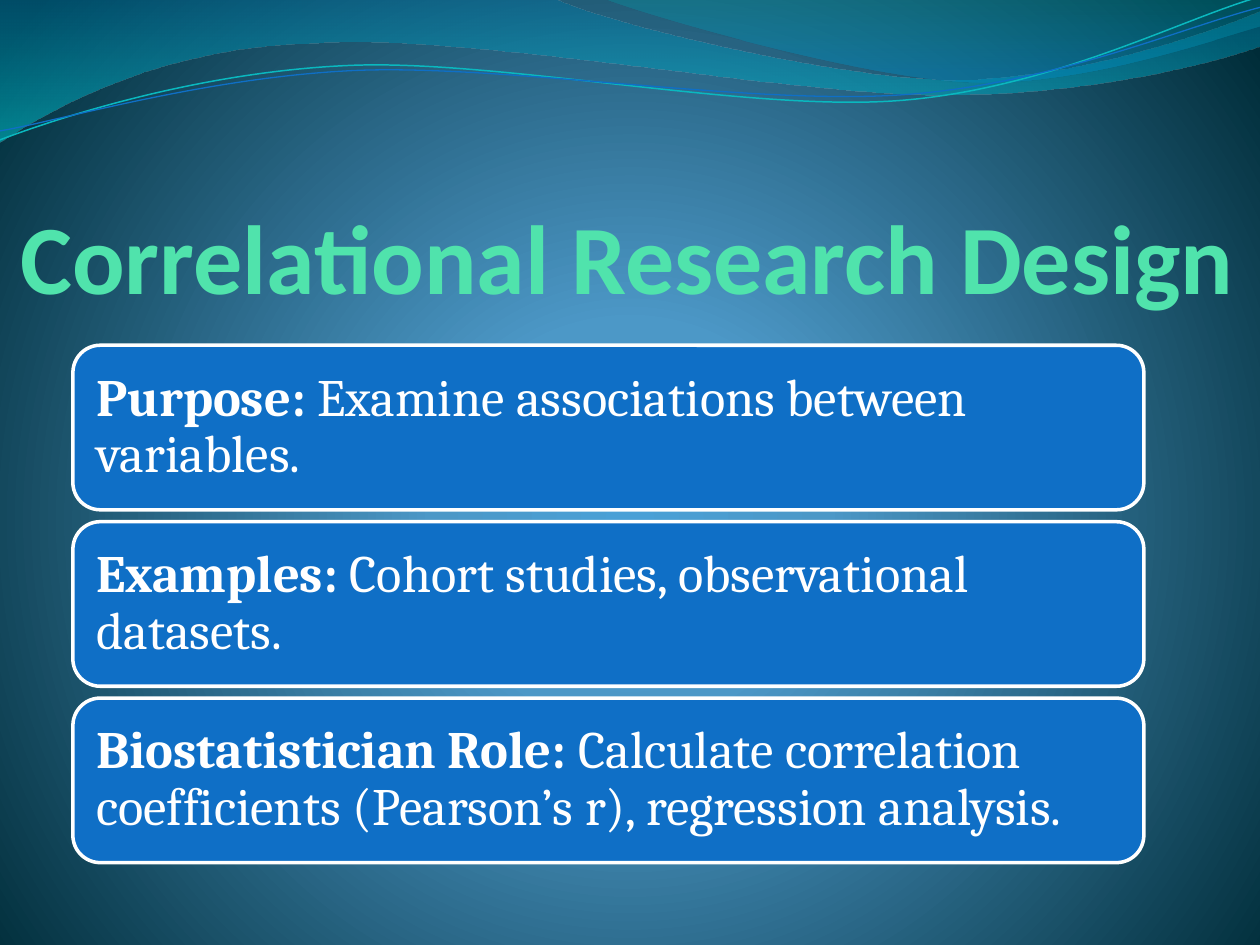
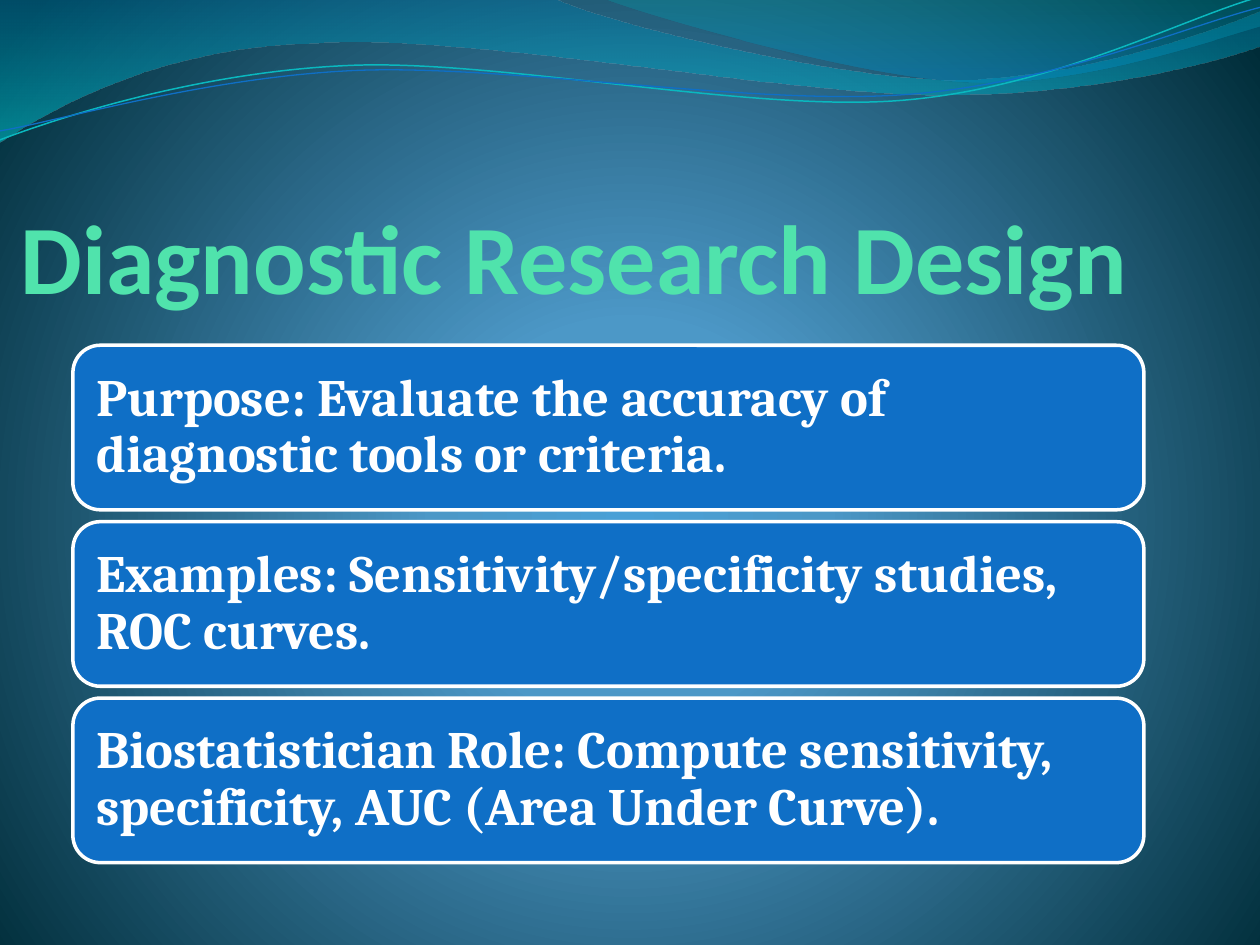
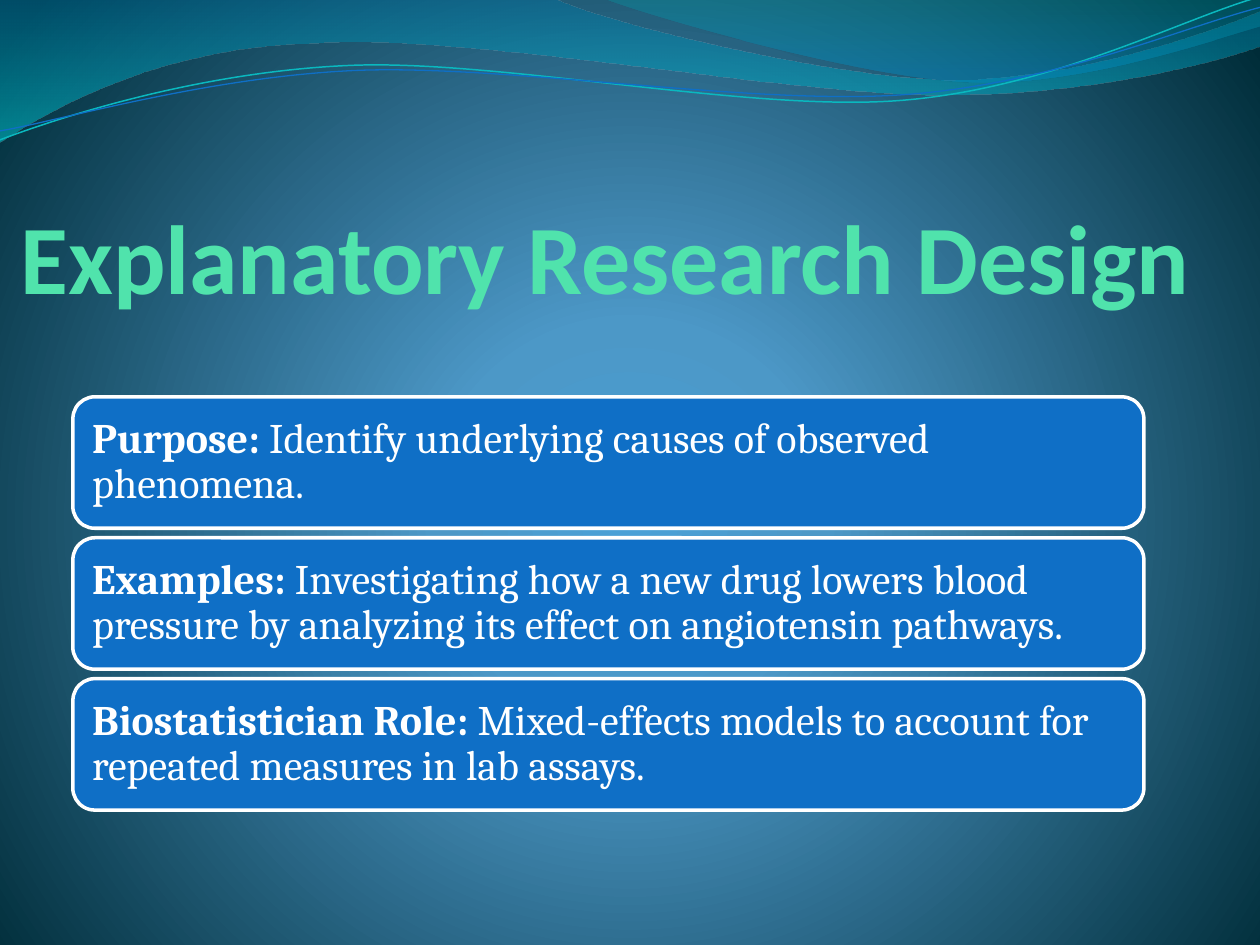
from pptx import Presentation
from pptx.dml.color import RGBColor
from pptx.enum.shapes import MSO_SHAPE
from pptx.enum.text import MSO_ANCHOR, MSO_AUTO_SIZE, PP_ALIGN
from pptx.oxml import parse_xml
from pptx.oxml.ns import nsdecls, qn
from pptx.util import Cm, Pt

ROUND = MSO_SHAPE.ROUNDED_RECTANGLE
LEFT = PP_ALIGN.LEFT
MIDDLE, BOTTOM = MSO_ANCHOR.MIDDLE, MSO_ANCHOR.BOTTOM
FIXED = MSO_AUTO_SIZE.NONE

WHITE = RGBColor(0xFF, 0xFF, 0xFF)
BLUE = RGBColor(0x0F, 0x6F, 0xC6)
AQUA = RGBColor(0x0A, 0xB8, 0xBF)
MINT = RGBColor(0x50, 0xE3, 0xAC)
SKY = RGBColor(0x4A, 0xA0, 0xD6)
STEEL = RGBColor(0x4C, 0x98, 0xC7)
NIGHT = RGBColor(0x00, 0x2C, 0x38)
DEEP = RGBColor(0x00, 0x74, 0xA1)
CYAN = RGBColor(0x00, 0xC6, 0xCF)
TEAL = RGBColor(0x00, 0xA1, 0xA9)
AZURE = RGBColor(0x00, 0x8B, 0xBF)

# Gradient stops: position, colour, opacity (all in percent)
GLOW = [(0, SKY, 100), (25, STEEL, 100), (100, NIGHT, 100)]
RADIAL = ('<a:path path="circle"><a:fillToRect l="10000" t="110000" '
          'r="10000" b="100000"/></a:path>')
DOWN = '<a:lin ang="5400000" scaled="1"/>'

# Outlines in cm: a start, then steps of one point (line) or three (curve)
WAVES = [
    ((0, 0), [
        [(11.18, -0.03)],
        [(12.09, 0.43), (16.87, 1.6), (19.25, 1.6)],
        [(21.67, 1.6), (24.33, 0.66), (25.4, 0.23)],
        [(25.43, 0.91)],
        [(24.97, 1.12), (22.1, 1.93), (18.95, 1.91)],
        [(15.8, 1.91), (9.7, 0.71), (6.53, 0.86)],
        [(3.28, 0.91), (1.17, 2.11), (-0.03, 2.87)],
        [(0, 0)],
    ], [(0, DEEP, 45), (100, CYAN, 55)]),
    ((12.17, -0.03), [
        [(12.93, 0.28), (17.32, 1.57), (19.53, 1.65)],
        [(21.74, 1.75), (24.41, 0.81), (25.4, 0.53)],
        [(25.4, 0)],
        [(12.17, -0.03)],
    ], [(0, TEAL, 30), (80, AZURE, 45)]),
]
LINES = [
    ((0, 2.82), [
        [(1.22, 2.36), (4.01, 1.45), (7.04, 1.32)],
        [(10.03, 1.19), (15.06, 2.26), (18.11, 2.03)],
        [(21.16, 1.8), (23.83, 0.38), (25.35, -0.05)],
    ], AQUA, 0.85),
    ((0, 2.64), [
        [(1.19, 2.44), (4.17, 1.55), (7.19, 1.42)],
        [(10.24, 1.3), (15.16, 2.13), (18.21, 1.91)],
        [(21.23, 1.7), (23.9, 0.53), (25.4, 0.15)],
    ], BLUE, 0.75),
]

TITLE = (0.41, 2.54, 25.63, 3.8)
TALL = (1.47, 6.96, 21.59, 10.43)
SHORT = (1.47, 8, 21.59, 8.33)

# Title, box of the cards, text size, inset, cards as (bold text, plain text)
SLIDES = [
    ("Correlational Research Design", TALL, 30, 0.31, [
        ("Purpose:", " Examine associations between variables."),
        ("Examples:", " Cohort studies, observational datasets."),
        ("Biostatistician Role:", " Calculate correlation coefficients "
         "(Pearson’s r), regression analysis."),
    ]),
    ("Diagnostic Research Design", TALL, 30, 0.31, [
        ("Purpose: Evaluate the accuracy of diagnostic tools or criteria.", ""),
        ("Examples: Sensitivity/specificity studies, ROC curves.", ""),
        ("Biostatistician Role: Compute sensitivity, specificity, "
         "AUC (Area Under Curve).", ""),
    ]),
    ("Explanatory Research Design", SHORT, 24, 0.26, [
        ("Purpose:", " Identify underlying causes of observed phenomena."),
        ("Examples: ", "Investigating how a new drug lowers blood pressure "
         "by analyzing its effect on angiotensin pathways."),
        ("Biostatistician Role:", " Mixed-effects models to account for "
         "repeated measures in lab assays."),
    ]),
]


def shade(item, fill, stops, way):
    """Give the fill of an item a gradient with its own stops and direction."""
    fill.gradient()
    marks = "".join(
        f'<a:gs pos="{pos * 1000}"><a:srgbClr val="{tone}">'
        f'<a:alpha val="{alpha * 1000}"/></a:srgbClr></a:gs>'
        for pos, tone, alpha in stops)
    old = next(item.element.iter(qn("a:gradFill")))
    old.getparent().replace(old, parse_xml(
        f'<a:gradFill {nsdecls("a")} rotWithShape="1">'
        f'<a:gsLst>{marks}</a:gsLst>{way}</a:gradFill>'))


def trace(shapes, start, steps, close):
    """Draw an outline, then join each three-point step into one curve."""
    dots = [(Cm(x), Cm(y)) for step in steps for x, y in step]
    pen = shapes.build_freeform(*map(Cm, start), scale=1.0)
    pen.add_line_segments(dots, close=close)
    shape = pen.convert_to_shape()
    shape.shadow.inherit = False
    legs = iter(list(shape.element.iter(qn("a:lnTo"))))
    for step in steps:
        first, *rest = [next(legs) for _ in step]
        if rest:
            curve = parse_xml(f'<a:cubicBezTo {nsdecls("a")}/>')
            first.addprevious(curve)
            for leg in (first, *rest):
                curve.append(leg[0])
                leg.getparent().remove(leg)
    return shape


def dress(master, slide):
    """Give the master its glow and waves, drawn first on a slide."""
    shade(master, master.background.fill, GLOW, RADIAL)
    parts = []
    for start, steps, stops in WAVES:
        wave = trace(slide.shapes, start, steps, True)
        shade(wave, wave.fill, stops, DOWN)
        wave.line.fill.background()
        parts.append(wave)
    for start, steps, tone, width in LINES:
        line = trace(slide.shapes, start, steps, False)
        line.fill.background()
        line.line.color.rgb = tone
        line.line.width = Pt(width)
        parts.append(line)
    tree = master.shapes.element
    for i, part in enumerate(parts):
        part.element.nvSpPr.cNvPr.set("id", str(20 + i))
        tree.insert(2 + i, part.element)


def set_frame(frame, anchor, inset):
    frame.word_wrap = True
    frame.auto_size = FIXED
    frame.vertical_anchor = anchor
    frame.margin_left = frame.margin_right = Cm(inset)
    frame.margin_top = frame.margin_bottom = Cm(inset)


def set_font(para, name, size, tone):
    para.alignment = LEFT
    para.font.name = name
    para.font.size = Pt(size)
    para.font.color.rgb = tone


def add_title(slide, text, box):
    title = slide.shapes.title
    title.left, title.top, title.width, title.height = map(Cm, box)
    title.text = text
    set_frame(title.text_frame, BOTTOM, 0)
    para = title.text_frame.paragraphs[0]
    set_font(para, "Calibri", 56, MINT)
    para.font.bold = True


def add_cards(slide, box, size, inset, cards):
    """Stack equal cards with equal gaps to fill the box."""
    left, top, width, height = box
    gap = 0.023 * height
    tall = (height - gap * (len(cards) - 1)) / len(cards)
    for i, texts in enumerate(cards):
        card = slide.shapes.add_shape(
            ROUND, Cm(left), Cm(top + i * (tall + gap)), Cm(width), Cm(tall))
        card.shadow.inherit = False
        card.fill.solid()
        card.fill.fore_color.rgb = BLUE
        card.line.color.rgb = WHITE
        card.line.width = Pt(2)
        set_frame(card.text_frame, MIDDLE, inset)
        para = card.text_frame.paragraphs[0]
        set_font(para, "Cambria", size, WHITE)
        para.line_spacing = 0.9
        for text, bold in zip(texts, (True, False)):
            if text:
                run = para.add_run()
                run.text = text
                run.font.bold = bold


def main():
    prs = Presentation()
    prs.slide_width, prs.slide_height = Cm(25.4), Cm(19.05)
    for title, box, size, inset, cards in SLIDES:
        slide = prs.slides.add_slide(prs.slide_layouts[5])
        add_title(slide, title, TITLE)
        add_cards(slide, box, size, inset, cards)
    dress(prs.slide_master, prs.slides[0])
    prs.save("out.pptx")


if __name__ == "__main__":
    main()
